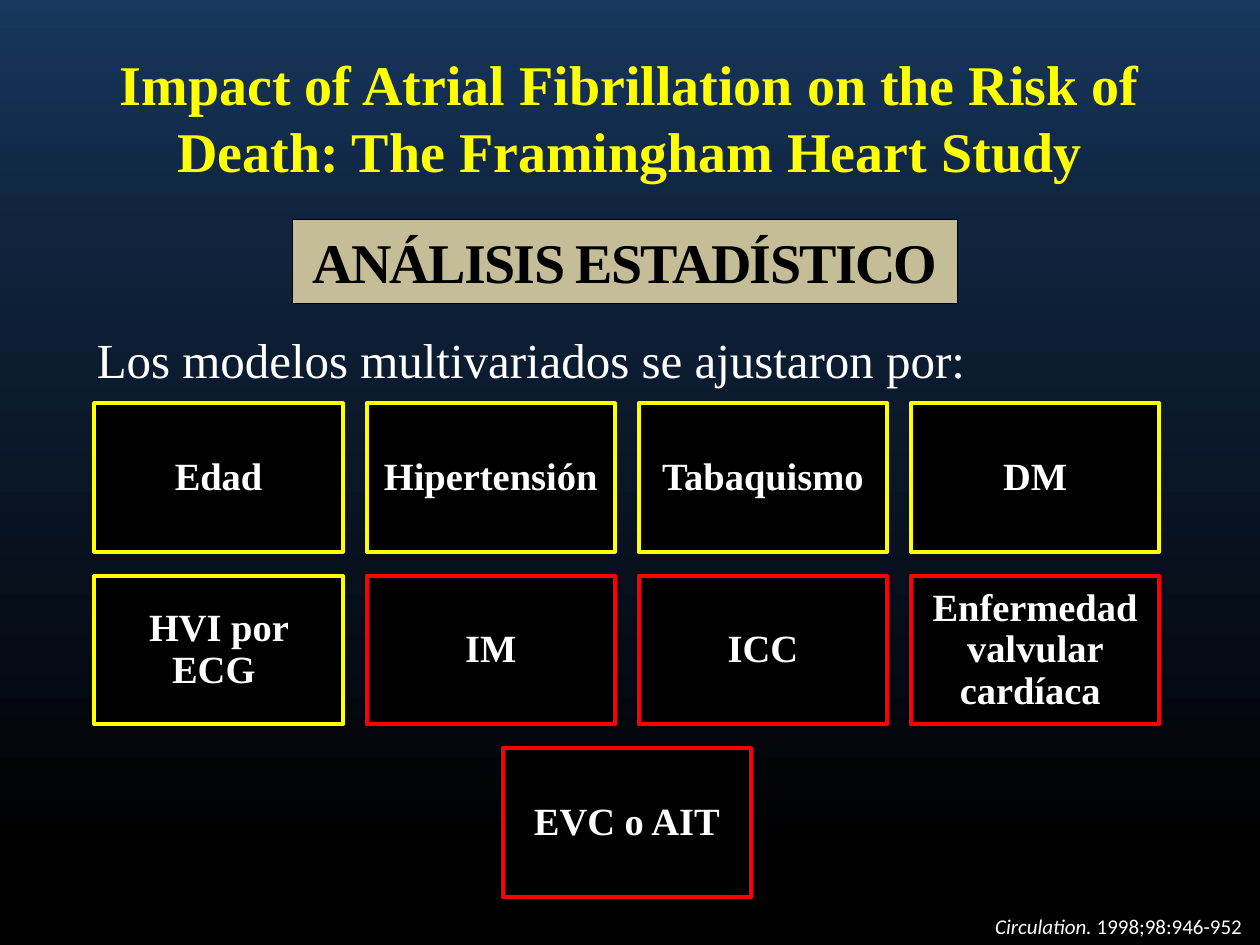
from copy import deepcopy
from dataclasses import dataclass

from pptx import Presentation
from pptx.dml.color import RGBColor
from pptx.enum.shapes import MSO_SHAPE
from pptx.enum.text import MSO_ANCHOR, PP_ALIGN
from pptx.oxml.ns import qn
from pptx.slide import Slide
from pptx.text.text import TextFrame
from pptx.util import Inches, Pt

YELLOW = RGBColor(0xFF, 0xFF, 0x00)
RED = RGBColor(0xFF, 0x00, 0x00)
WHITE = RGBColor(0xFF, 0xFF, 0xFF)
BLACK = RGBColor(0x00, 0x00, 0x00)
TAN = RGBColor(0xC4, 0xBD, 0x97)
BLUE = RGBColor(0x17, 0x37, 0x5E)
NAVY = RGBColor(0x0F, 0x24, 0x3E)
SERIF = "Times New Roman"

# Grid of adjustment factors, in inches
GRID_LEFT, GRID_TOP = 0.75, 3.2
CARD_WIDTH, CARD_HEIGHT = 1.97, 1.18
GAP = 0.19
COLUMN_STEP = CARD_WIDTH + GAP
ROW_STEP = CARD_HEIGHT + GAP


@dataclass(frozen=True)
class Box:
    left: float
    top: float
    width: float
    height: float

    def lengths(self) -> list[int]:
        return [Inches(value) for value in (self.left, self.top, self.width, self.height)]


@dataclass(frozen=True)
class Factor:
    label: str
    column: float
    row: int
    outline: RGBColor

    def box(self) -> Box:
        return Box(GRID_LEFT + self.column * COLUMN_STEP,
                   GRID_TOP + self.row * ROW_STEP, CARD_WIDTH, CARD_HEIGHT)


FACTORS = [
    Factor("Edad", 0, 0, YELLOW),
    Factor("Hipertensión", 1, 0, YELLOW),
    Factor("Tabaquismo", 2, 0, YELLOW),
    Factor("DM", 3, 0, YELLOW),
    Factor("HVI por ECG ", 0, 1, YELLOW),
    Factor("IM", 1, 1, RED),
    Factor("ICC", 2, 1, RED),
    Factor("Enfermedad valvular cardíaca ", 3, 1, RED),
    Factor("EVC o AIT", 1.5, 2, RED),
]


def paint_background(slide: Slide) -> None:
    fill = slide.background.fill
    fill.gradient()
    fill.gradient_angle = 270
    stop_list = slide.element.find(".//" + qn("a:gsLst"))
    stop_list.append(deepcopy(stop_list[-1]))
    stops = [(0, BLUE), (0.24, NAVY), (0.91, BLACK)]
    for stop, (position, color) in zip(fill.gradient_stops, stops):
        stop.position = position
        stop.color.rgb = color


def write(text_frame: TextFrame, text: str, size: float, color: RGBColor,
          bold: bool = False, font: str = SERIF, align: PP_ALIGN = PP_ALIGN.CENTER) -> None:
    text_frame.text = text
    paragraph = text_frame.paragraphs[0]
    paragraph.alignment = align
    for run in paragraph.runs:
        run.font.name = font
        run.font.size = Pt(size)
        run.font.bold = bold
        run.font.color.rgb = color


def add_text(slide: Slide, box: Box, wrap: bool = False) -> TextFrame:
    text_frame = slide.shapes.add_textbox(*box.lengths()).text_frame
    text_frame.word_wrap = wrap
    return text_frame


def add_panel(slide: Slide, box: Box, fill: RGBColor, outline: RGBColor,
              line_width: float) -> TextFrame:
    shape = slide.shapes.add_shape(MSO_SHAPE.RECTANGLE, *box.lengths())
    shape.shadow.inherit = False
    shape.fill.solid()
    shape.fill.fore_color.rgb = fill
    shape.line.color.rgb = outline
    shape.line.width = Pt(line_width)
    text_frame = shape.text_frame
    text_frame.word_wrap = True
    text_frame.vertical_anchor = MSO_ANCHOR.MIDDLE
    return text_frame


def add_factor(slide: Slide, factor: Factor) -> None:
    text_frame = add_panel(slide, factor.box(), BLACK, factor.outline, 2.25)
    text_frame.margin_left = text_frame.margin_right = Inches(0.09)
    text_frame.margin_top = text_frame.margin_bottom = Inches(0.09)
    write(text_frame, factor.label, 22, WHITE, bold=True)
    text_frame.paragraphs[0].line_spacing = 0.9


def main() -> None:
    presentation = Presentation()
    presentation.slide_width = Inches(10)
    presentation.slide_height = Inches(7.5)
    slide = presentation.slides.add_slide(presentation.slide_layouts[6])
    paint_background(slide)

    # Title
    title = add_text(slide, Box(0.5, 0.3, 9, 1.25), wrap=True)
    title.vertical_anchor = MSO_ANCHOR.MIDDLE
    write(title, "Impact of Atrial Fibrillation on the Risk of Death: "
                 "The Framingham Heart Study", 32, YELLOW, bold=True)

    # Section banner, with letters set one point tighter
    banner = add_panel(slide, Box(2.32, 1.74, 5.28, 0.67), TAN, BLACK, 0.75)
    write(banner, "ANÁLISIS ESTADÍSTICO", 32, BLACK, bold=True)
    banner.paragraphs[0].runs[0].font._element.set("spc", "-100")

    # Adjustment factors
    for factor in FACTORS:
        add_factor(slide, factor)

    # Citation
    citation = add_text(slide, Box(7.8, 7.2, 2.19, 0.3))
    write(citation, "Circulation. ", 12, WHITE, font="Calibri", align=PP_ALIGN.LEFT)
    journal = citation.paragraphs[0].runs[0]
    journal.font.italic = True
    reference = citation.paragraphs[0].add_run()
    reference.text = "1998;98:946-952"
    reference.font.name = "Calibri"
    reference.font.size = Pt(12)
    reference.font.color.rgb = WHITE

    # Lead-in sentence
    lead_in = add_text(slide, Box(0.67, 2.57, 7.16, 0.57))
    write(lead_in, "Los modelos multivariados se ajustaron por:", 28, WHITE,
          align=PP_ALIGN.JUSTIFY)

    presentation.save("out.pptx")


if __name__ == "__main__":
    main()
